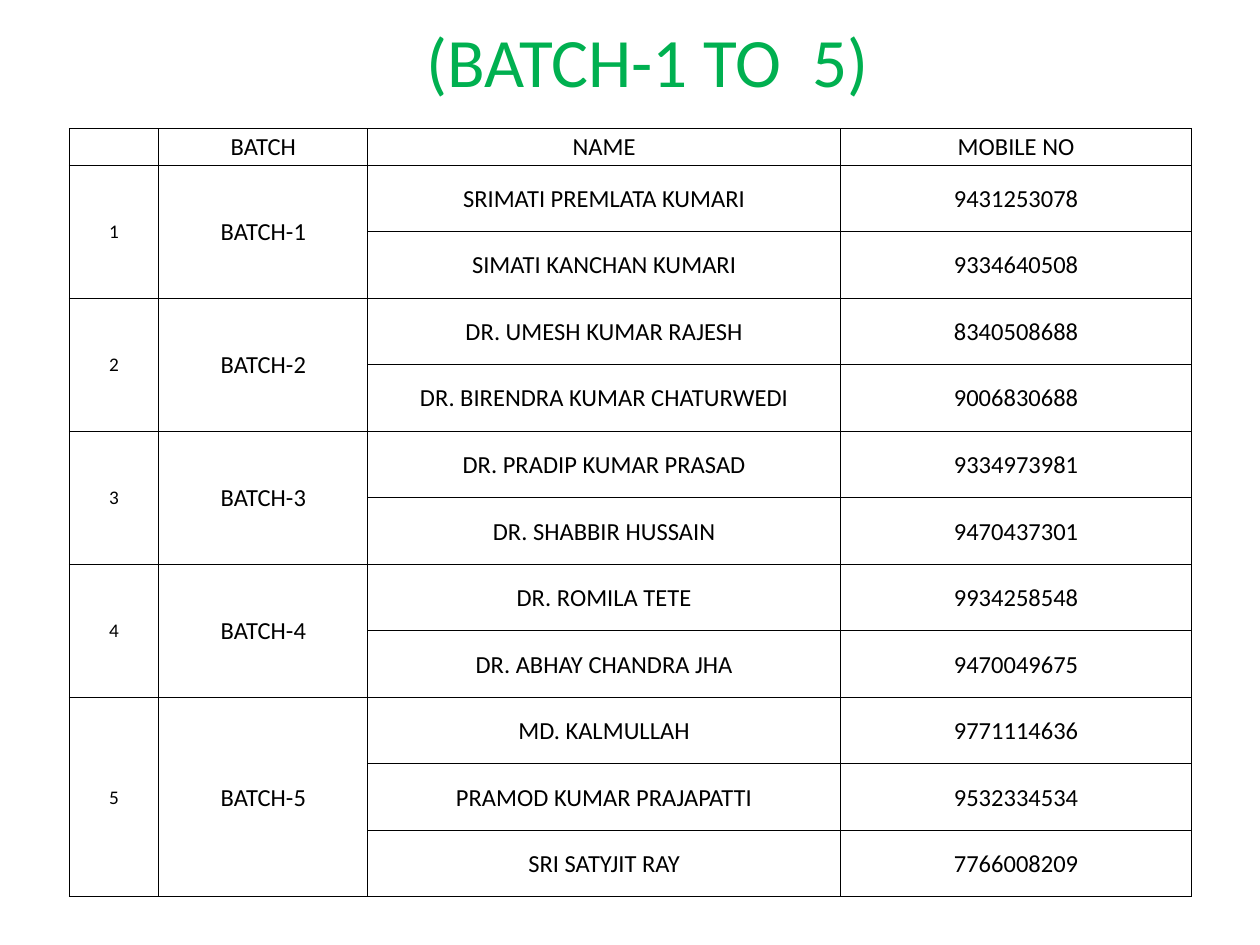
"""Build a slide listing the members and mobile numbers of batches 1 to 5."""
from dataclasses import dataclass

from lxml import etree
from pptx import Presentation
from pptx.dml.color import RGBColor
from pptx.enum.text import MSO_ANCHOR, PP_ALIGN
from pptx.oxml.ns import qn
from pptx.table import Table, _Cell
from pptx.text.text import TextFrame
from pptx.util import Inches, Pt

CENTER = PP_ALIGN.CENTER
MIDDLE = MSO_ANCHOR.MIDDLE
GREEN = RGBColor(0x00, 0xB0, 0x50)
BLACK = RGBColor(0x00, 0x00, 0x00)
WHITE = RGBColor(0xFF, 0xFF, 0xFF)
FONT = "Calibri"

HEADERS = ("", "BATCH", "NAME", "MOBILE NO")
COL_WIDTHS = (0.71, 1.66, 3.75, 2.79)
LEFT, TOP, HEIGHT = 0.55, 1.02, 6.09
HEADER_HEIGHT = 0.28


@dataclass(frozen=True)
class Member:
    name: str
    mobile: str


BATCHES = (
    (Member("SRIMATI PREMLATA KUMARI", "9431253078"),
     Member("SIMATI KANCHAN KUMARI", "9334640508")),
    (Member("DR. UMESH KUMAR RAJESH", "8340508688"),
     Member("DR. BIRENDRA KUMAR CHATURWEDI", "9006830688")),
    (Member("DR. PRADIP KUMAR PRASAD", "9334973981"),
     Member("DR. SHABBIR HUSSAIN", "9470437301")),
    (Member("DR. ROMILA TETE", "9934258548"),
     Member("DR. ABHAY CHANDRA JHA", "9470049675")),
    (Member("MD. KALMULLAH", "9771114636"),
     Member("PRAMOD KUMAR PRAJAPATTI", "9532334534"),
     Member("SRI SATYJIT RAY", "7766008209")),
)


def write(tf: TextFrame, text: str, *, size: float = 14, color: RGBColor = BLACK) -> None:
    p = tf.paragraphs[0]
    p.alignment = CENTER
    r = p.add_run()
    r.text = text
    r.font.name = FONT
    r.font.size = Pt(size)
    r.font.bold = False
    r.font.color.rgb = color


def style_cell(cell: _Cell) -> None:
    cell.vertical_anchor = MIDDLE
    cell.margin_left = cell.margin_right = cell.margin_top = Inches(0.01)
    cell.margin_bottom = 0
    tc_pr = cell._tc.get_or_add_tcPr()
    for side in ("lnL", "lnR", "lnT", "lnB"):
        ln = etree.SubElement(tc_pr, qn(f"a:{side}"), w=str(Pt(0.5)))
        fill = etree.SubElement(ln, qn("a:solidFill"))
        etree.SubElement(fill, qn("a:srgbClr"), val=str(BLACK))
    cell.fill.solid()
    cell.fill.fore_color.rgb = WHITE


def fill_table(table: Table) -> None:
    for cell in table.iter_cells():
        style_cell(cell)
    for col, header in enumerate(HEADERS):
        write(table.cell(0, col).text_frame, header)
    row = 1
    for number, members in enumerate(BATCHES, 1):
        last = row + len(members) - 1
        for col, (text, size) in enumerate(((str(number), 11), (f"BATCH-{number}", 14))):
            table.cell(row, col).merge(table.cell(last, col))
            write(table.cell(row, col).text_frame, text, size=size)
        for offset, member in enumerate(members):
            write(table.cell(row + offset, 2).text_frame, member.name)
            write(table.cell(row + offset, 3).text_frame, member.mobile)
        row = last + 1


def main() -> None:
    prs = Presentation()
    prs.slide_width, prs.slide_height = Inches(10), Inches(7.5)
    slide = prs.slides.add_slide(prs.slide_layouts[5])

    title = slide.shapes.title
    title.left, title.top = Inches(0.83), Inches(0.16)
    title.width, title.height = Inches(8.5), Inches(0.63)
    title.text_frame.vertical_anchor = MIDDLE
    write(title.text_frame, " (BATCH-1 TO  5)", size=39.6, color=GREEN)

    count = sum(len(members) for members in BATCHES)
    table = slide.shapes.add_table(
        count + 1, len(HEADERS), Inches(LEFT), Inches(TOP),
        Inches(sum(COL_WIDTHS)), Inches(HEIGHT)).table
    for column, width in zip(table.columns, COL_WIDTHS):
        column.width = Inches(width)
    for row in table.rows:
        row.height = Inches((HEIGHT - HEADER_HEIGHT) / count)
    table.rows[0].height = Inches(HEADER_HEIGHT)
    fill_table(table)

    prs.save("out.pptx")


if __name__ == "__main__":
    main()
